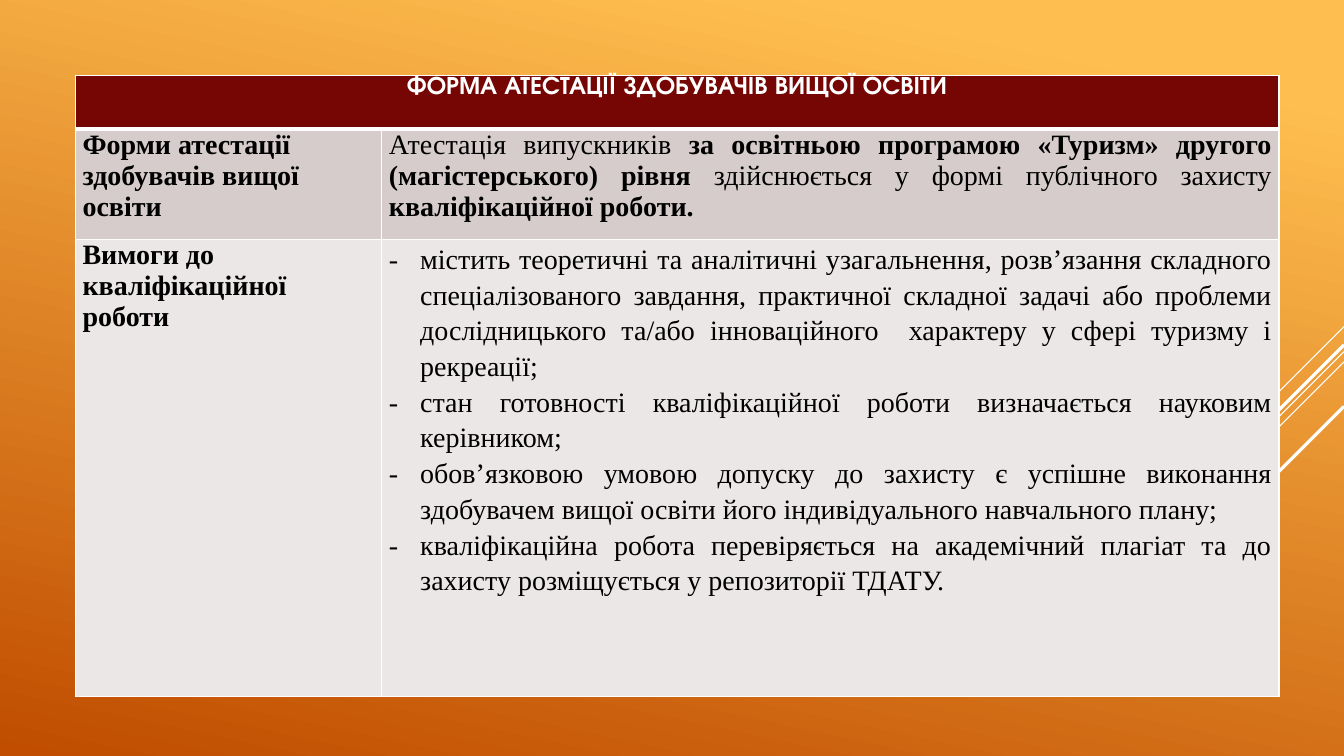
from lxml import etree
from pptx import Presentation
from pptx.dml.color import RGBColor
from pptx.enum.shapes import MSO_CONNECTOR
from pptx.enum.text import PP_ALIGN
from pptx.oxml.ns import qn
from pptx.util import Cm, Pt

LEFT, CENTER, JUSTIFY = PP_ALIGN.LEFT, PP_ALIGN.CENTER, PP_ALIGN.JUSTIFY
STRAIGHT = MSO_CONNECTOR.STRAIGHT
WHITE, BLACK = "FFFFFF", "000000"
HEADING_FONT, BODY_FONT = "TeX Gyre Adventor", "Times New Roman"

# Text runs are (text, bold) pairs
HEADING = [("ФОРМА АТЕСТАЦІЇ ЗДОБУВАЧІВ ВИЩОЇ ОСВІТИ", True)]
FORMS_LABEL = [("Форми атестації здобувачів вищої освіти", True)]
FORMS = [
    ("Атестація випускників ", False),
    ("за освітньою програмою «Туризм» другого (магістерського) рівня ", True),
    ("здійснюється у формі публічного захисту ", False),
    ("кваліфікаційної роботи.", True),
]
REQUIREMENTS_LABEL = [("Вимоги до кваліфікаційної роботи", True)]
REQUIREMENTS = [
    "містить теоретичні та аналітичні узагальнення, розв’язання складного "
    "спеціалізованого завдання, практичної складної задачі або проблеми "
    "дослідницького та/або інноваційного  характеру у сфері туризму і рекреації;",
    "стан готовності кваліфікаційної роботи визначається науковим керівником;",
    "обов’язковою умовою допуску до захисту є успішне виконання здобувачем "
    "вищої освіти його індивідуального навчального плану;",
    "кваліфікаційна робота перевіряється на академічний плагіат та до захисту "
    "розміщується у репозиторії ТДАТУ.",
]

# Sizes in centimetres
SLIDE_WIDTH, SLIDE_HEIGHT = 33.87, 19.05
TABLE_LEFT, TABLE_TOP = 1.9, 1.9
COLUMN_WIDTHS = [7.72, 22.61]
ROW_HEIGHTS = [1.35, 2.79, 11.51]
ROW_FILLS = ["760603", "D6CCCC", "ECE7E7"]
CELL_MARGIN, BULLET_INDENT = 0.18, 0.79
BACKGROUND_STOPS = [(0.1, "FFBF50"), (1, "C04D00")]
# Diagonals: height at the right edge, run to the lower left, weight in points
DIAGONALS = [
    (8.23, 2.54, 0.75),
    (8.86, 8.28, 0.75),
    (9.12, 5.27, 0.75),
    (8.69, 4.85, 2.25),
    (10.24, 3.53, 2.25),
]


def color(value):
    return RGBColor.from_string(value)


def paint_background(slide):
    fill = slide.background.fill
    fill.gradient()
    fill.gradient_angle = 360 - 102
    for stop, (position, value) in zip(fill.gradient_stops, BACKGROUND_STOPS):
        stop.position = position
        stop.color.rgb = color(value)


def add_diagonal(slide, top, run, weight):
    line = slide.shapes.add_connector(
        STRAIGHT, Cm(SLIDE_WIDTH), Cm(top), Cm(SLIDE_WIDTH - run), Cm(top + run))
    line.line.color.rgb = color(WHITE)
    line.line.width = Pt(weight)
    etree.SubElement(line._element.spPr, qn("a:effectLst"))


def write(paragraph, runs, *, font=BODY_FONT, size=20, ink=BLACK,
          align=LEFT, spacing=None, bullet=None):
    paragraph.alignment = align
    if spacing:
        paragraph.line_spacing = spacing
    if bullet:
        properties = paragraph._p.get_or_add_pPr()
        properties.set("marL", str(Cm(BULLET_INDENT)))
        properties.set("indent", str(-Cm(BULLET_INDENT)))
        etree.SubElement(properties, qn("a:buFont"), typeface=BODY_FONT)
        etree.SubElement(properties, qn("a:buChar"), char=bullet)
    for text, bold in runs:
        run = paragraph.add_run()
        run.text = text
        run.font.name = font
        run.font.size = Pt(size)
        run.font.bold = bold
        run.font.color.rgb = color(ink)


def style_cell(cell, fill, top_weight, bottom_weight):
    """Set margins, white borders (weights in points) and fill."""
    cell.margin_left = cell.margin_right = Cm(CELL_MARGIN)
    cell.margin_top = cell.margin_bottom = 0
    properties = cell._tc.get_or_add_tcPr()
    weights = {"lnL": 1, "lnR": 1, "lnT": top_weight, "lnB": bottom_weight}
    for side, weight in weights.items():
        border = etree.SubElement(properties, qn("a:" + side), w=str(Pt(weight)))
        solid = etree.SubElement(border, qn("a:solidFill"))
        etree.SubElement(solid, qn("a:srgbClr"), val=WHITE)
    cell.fill.solid()
    cell.fill.fore_color.rgb = color(fill)


def add_table(slide):
    table = slide.shapes.add_table(
        len(ROW_HEIGHTS), len(COLUMN_WIDTHS), Cm(TABLE_LEFT), Cm(TABLE_TOP),
        Cm(sum(COLUMN_WIDTHS)), Cm(sum(ROW_HEIGHTS))).table
    for column, width in zip(table.columns, COLUMN_WIDTHS):
        column.width = Cm(width)
    for index, (row, height) in enumerate(zip(table.rows, ROW_HEIGHTS)):
        row.height = Cm(height)
        for cell in row.cells:
            style_cell(cell, ROW_FILLS[index],
                       top_weight=3 if index == 1 else 1,
                       bottom_weight=3 if index == 0 else 1)
    table.cell(0, 0).merge(table.cell(0, 1))
    return table


def fill_table(table):
    def first_paragraph(row, column):
        return table.cell(row, column).text_frame.paragraphs[0]

    write(first_paragraph(0, 0), HEADING, font=HEADING_FONT, size=18,
          ink=WHITE, align=CENTER)
    write(first_paragraph(1, 0), FORMS_LABEL)
    write(first_paragraph(1, 1), FORMS, align=JUSTIFY)
    write(first_paragraph(2, 0), REQUIREMENTS_LABEL)
    frame = table.cell(2, 1).text_frame
    for index, text in enumerate(REQUIREMENTS):
        paragraph = frame.add_paragraph() if index else frame.paragraphs[0]
        write(paragraph, [(text, False)], align=JUSTIFY, spacing=1.15, bullet="-")


def main():
    presentation = Presentation()
    presentation.slide_width = Cm(SLIDE_WIDTH)
    presentation.slide_height = Cm(SLIDE_HEIGHT)
    slide = presentation.slides.add_slide(presentation.slide_layouts[6])
    paint_background(slide)
    for diagonal in DIAGONALS:
        add_diagonal(slide, *diagonal)
    fill_table(add_table(slide))
    presentation.save("out.pptx")


if __name__ == "__main__":
    main()
